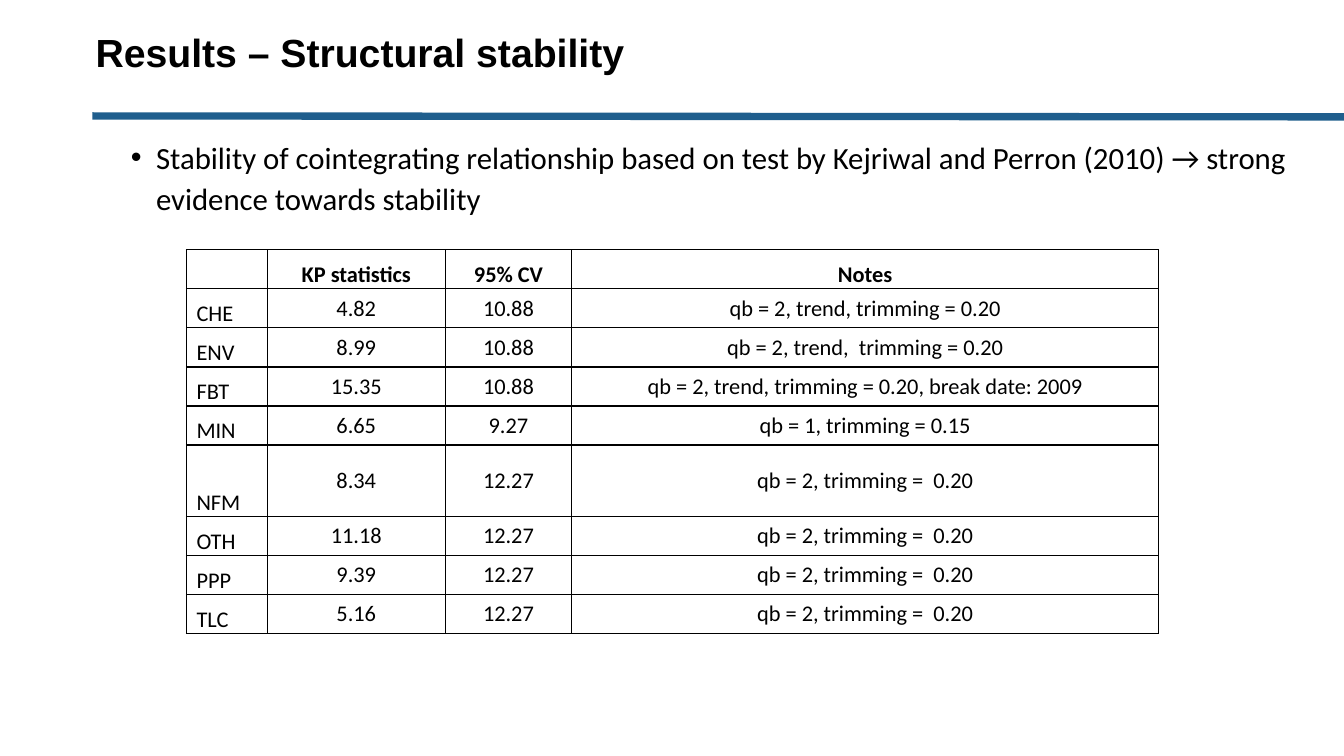
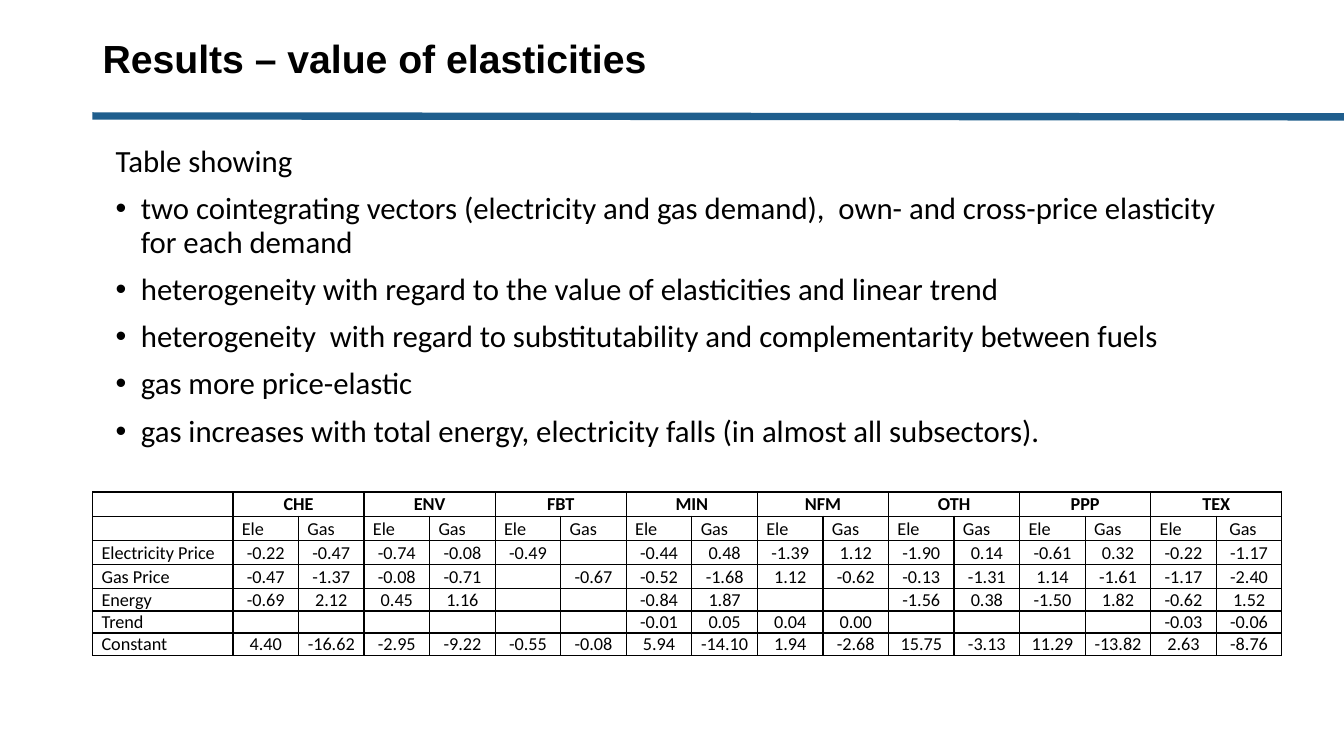
from lxml import etree
from pptx import Presentation
from pptx.dml.color import RGBColor
from pptx.enum.shapes import MSO_CONNECTOR
from pptx.enum.text import MSO_ANCHOR, PP_ALIGN
from pptx.oxml.ns import qn
from pptx.util import Pt

STRAIGHT = MSO_CONNECTOR.STRAIGHT
MIDDLE, BOTTOM = MSO_ANCHOR.MIDDLE, MSO_ANCHOR.BOTTOM
LEFT, CENTER = PP_ALIGN.LEFT, PP_ALIGN.CENTER

# Shared style
SLIDE_WIDTH, SLIDE_HEIGHT = 960, 540
BLACK, RULE_BLUE = "000000", "1F5E8D"
TITLE_FONT, BODY_FONT = "Arial", "Calibri"
TITLE_SIZE, BODY_SIZE = 28, 22
BULLET_INDENT = 18

# Table content
STABILITY_ROWS = [
    ["", "KP statistics", "95% CV", "Notes"],
    ["CHE", "4.82", "10.88", "qb = 2, trend, trimming = 0.20"],
    ["ENV", "8.99", "10.88", "qb = 2, trend,  trimming = 0.20"],
    ["FBT", "15.35", "10.88", "qb = 2, trend, trimming = 0.20, break date: 2009"],
    ["MIN", "6.65", "9.27", "qb = 1, trimming = 0.15"],
    ["NFM", "8.34", "12.27", "qb = 2, trimming =  0.20"],
    ["OTH", "11.18", "12.27", "qb = 2, trimming =  0.20"],
    ["PPP", "9.39", "12.27", "qb = 2, trimming =  0.20"],
    ["TLC", "5.16", "12.27", "qb = 2, trimming =  0.20"],
]
SUBSECTORS = ["CHE", "ENV", "FBT", "MIN", "NFM", "OTH", "PPP", "TEX"]
ELASTICITIES = [
    ["Electricity Price", "-0.22", "-0.47", "-0.74", "-0.08", "-0.49", "", "-0.44", "0.48",
     "-1.39", "1.12", "-1.90", "0.14", "-0.61", "0.32", "-0.22", "-1.17"],
    ["Gas Price", "-0.47", "-1.37", "-0.08", "-0.71", "", "-0.67", "-0.52", "-1.68",
     "1.12", "-0.62", "-0.13", "-1.31", "1.14", "-1.61", "-1.17", "-2.40"],
    ["Energy", "-0.69", "2.12", "0.45", "1.16", "", "", "-0.84", "1.87",
     "", "", "-1.56", "0.38", "-1.50", "1.82", "-0.62", "1.52"],
    ["Trend", "", "", "", "", "", "", "-0.01", "0.05",
     "0.04", "0.00", "", "", "", "", "-0.03", "-0.06"],
    ["Constant", "4.40", "-16.62", "-2.95", "-9.22", "-0.55", "-0.08", "5.94", "-14.10",
     "1.94", "-2.68", "15.75", "-3.13", "11.29", "-13.82", "2.63", "-8.76"],
]


def color(hex_code):
    return RGBColor.from_string(hex_code)


def style_font(paragraph, name, size, bold=False):
    font = paragraph.font
    font.name, font.size, font.bold = name, Pt(size), bold
    font.color.rgb = color(BLACK)


def add_text_frame(slide, left, top, width, height):
    frame = slide.shapes.add_textbox(Pt(left), Pt(top), Pt(width), Pt(height)).text_frame
    frame.word_wrap = True
    return frame


def add_rule(slide):
    rule = slide.shapes.add_connector(STRAIGHT, Pt(66), Pt(82.8), Pt(SLIDE_WIDTH), Pt(83.5))
    rule.line.color.rgb = color(RULE_BLUE)
    rule.line.width = Pt(5.25)
    etree.SubElement(rule._element.spPr, qn("a:effectLst"))


def add_titled_slide(deck, title, left, height):
    slide = deck.slides.add_slide(deck.slide_layouts[6])
    add_rule(slide)
    frame = add_text_frame(slide, left, 0, 828, height)
    frame.vertical_anchor = MIDDLE
    heading = frame.paragraphs[0]
    heading.text = title
    heading.line_spacing = 0.9
    style_font(heading, TITLE_FONT, TITLE_SIZE, bold=True)
    return slide


def add_bullet(paragraph):
    properties = paragraph._p.get_or_add_pPr()
    properties.set("marL", str(Pt(BULLET_INDENT)))
    properties.set("indent", str(-Pt(BULLET_INDENT)))
    etree.SubElement(properties, qn("a:buFont"), typeface="Arial")
    etree.SubElement(properties, qn("a:buChar"), char="•")


def add_body(slide, box, bullets, line_spacing, intro=None):
    frame = add_text_frame(slide, *box)
    lines = ([intro] if intro else []) + bullets
    for index, line in enumerate(lines):
        paragraph = frame.add_paragraph() if index else frame.paragraphs[0]
        paragraph.text = line
        paragraph.line_spacing = line_spacing
        if index:
            paragraph.space_before = Pt(10)
        if line != intro:
            add_bullet(paragraph)
        style_font(paragraph, BODY_FONT, BODY_SIZE)


def add_borders(cell):
    properties = cell._tc.get_or_add_tcPr()
    for side in ("a:lnL", "a:lnR", "a:lnT", "a:lnB"):
        border = etree.SubElement(properties, qn(side), w=str(Pt(1)))
        fill = etree.SubElement(border, qn("a:solidFill"))
        etree.SubElement(fill, qn("a:srgbClr"), val=BLACK)


def fill_cell(cell, text, size, side_margin, bold, align, anchor):
    cell.margin_left = cell.margin_right = Pt(side_margin)
    cell.margin_top = cell.margin_bottom = 0
    cell.vertical_anchor = anchor
    add_borders(cell)
    cell.fill.background()
    paragraph = cell.text_frame.paragraphs[0]
    paragraph.alignment = align
    if text:
        paragraph.text = text
    else:
        # An empty cell needs its own size, or its row would grow
        etree.SubElement(paragraph._p, qn("a:endParaRPr"), sz=str(size * 100))
    style_font(paragraph, BODY_FONT, size, bold)


def add_grid(slide, left, top, widths, heights, rows, size, side_margin, align_at, anchor_at):
    table = slide.shapes.add_table(len(heights), len(widths), Pt(left), Pt(top),
                                   Pt(sum(widths)), Pt(sum(heights))).table
    table.first_row = table.horz_banding = False
    for column, width in zip(table.columns, widths):
        column.width = Pt(width)
    for table_row, height in zip(table.rows, heights):
        table_row.height = Pt(height)
    for r, row in enumerate(rows):
        for c, text in enumerate(row):
            fill_cell(table.cell(r, c), text, size, side_margin, r == 0,
                      align_at(r, c), anchor_at(r, c))
    return table


def build_stability(deck):
    slide = add_titled_slide(deck, "Results – Structural stability", 61.2, 77.8)
    add_body(slide, (86.4, 92.9, 839.5, 371.5),
             ["Stability of cointegrating relationship based on test by Kejriwal and Perron "
              "(2010) → strong evidence towards stability"], 1.1)
    heights = [50.8 if row[0] == "NFM" else 27.9 for row in STABILITY_ROWS]
    add_grid(slide, 133.2, 178.4, [57.6, 127.4, 90, 419.6], heights, STABILITY_ROWS, 16, 7.2,
             lambda r, c: CENTER if c else LEFT,
             lambda r, c: MIDDLE if r and c else BOTTOM)


def build_elasticities(deck):
    slide = add_titled_slide(deck, "Results – value of elasticities", 66.2, 86.4)
    add_body(slide, (75.6, 100.8, 828, 246.2), [
        "two cointegrating vectors (electricity and gas demand),  own- and cross-price "
        "elasticity for each demand",
        "heterogeneity with regard to the value of elasticities and linear trend",
        "heterogeneity  with regard to substitutability and complementarity between fuels",
        "gas more price-elastic",
        "gas increases with total energy, electricity falls (in almost all subsectors).",
    ], 0.9, intro="Table showing")

    # Each subsector heads an electricity and a gas column
    subsector_row = [""] + [text for name in SUBSECTORS for text in (name, "")]
    fuel_row = [""] + ["Ele", "Gas"] * (len(SUBSECTORS) - 1) + ["Ele", " Gas"]
    table = add_grid(slide, 66.2, 351.4, [100.2] + [46.84] * 16, [17.3] * 4 + [15.8] * 3,
                     [subsector_row, fuel_row] + ELASTICITIES, 13, 6.4,
                     lambda r, c: CENTER if c and r != 1 else LEFT,
                     lambda r, c: BOTTOM if r else MIDDLE)
    for c in range(1, len(subsector_row), 2):
        table.cell(0, c).merge(table.cell(0, c + 1))


def main():
    deck = Presentation()
    deck.slide_width, deck.slide_height = Pt(SLIDE_WIDTH), Pt(SLIDE_HEIGHT)
    build_stability(deck)
    build_elasticities(deck)
    deck.save("out.pptx")


if __name__ == "__main__":
    main()
